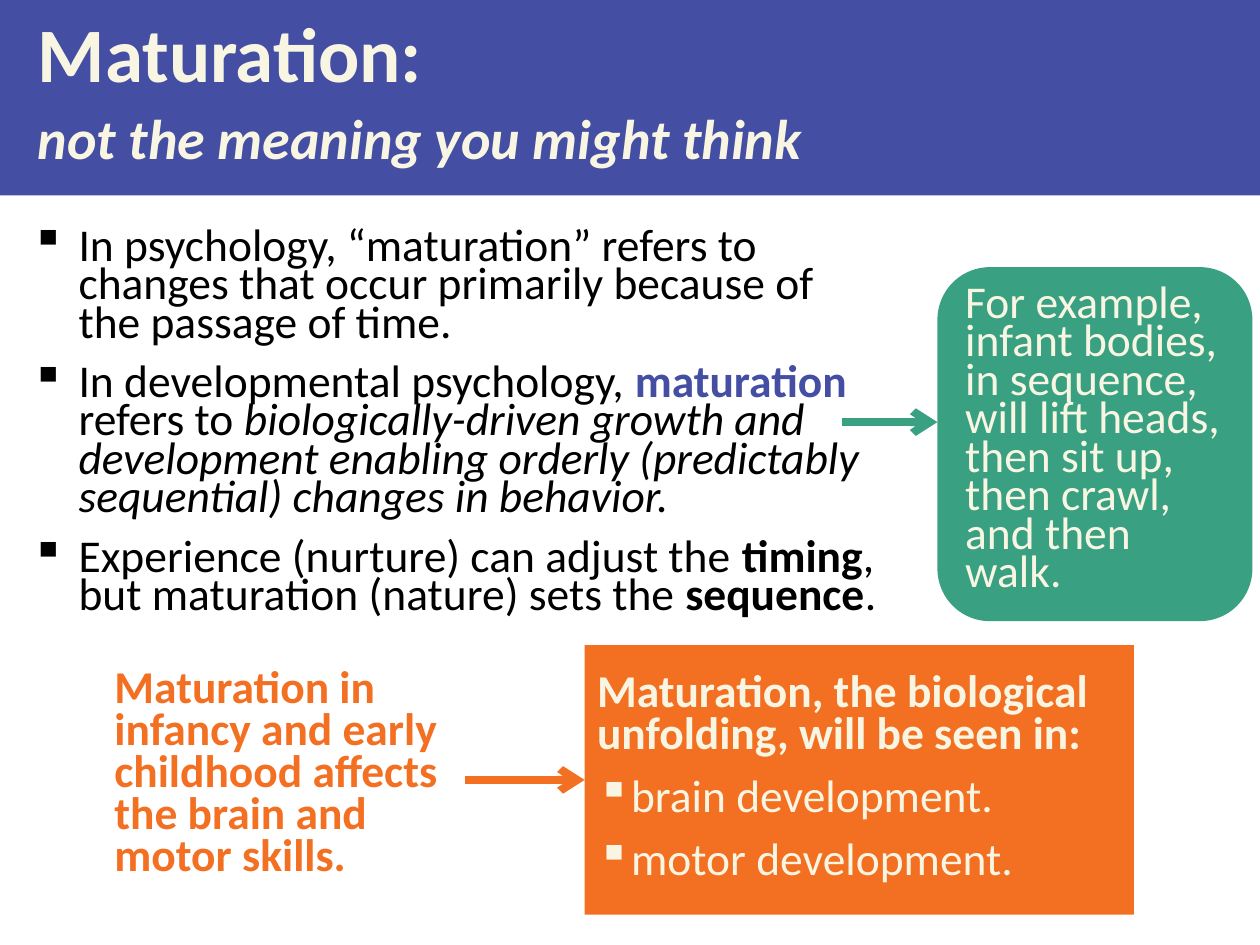
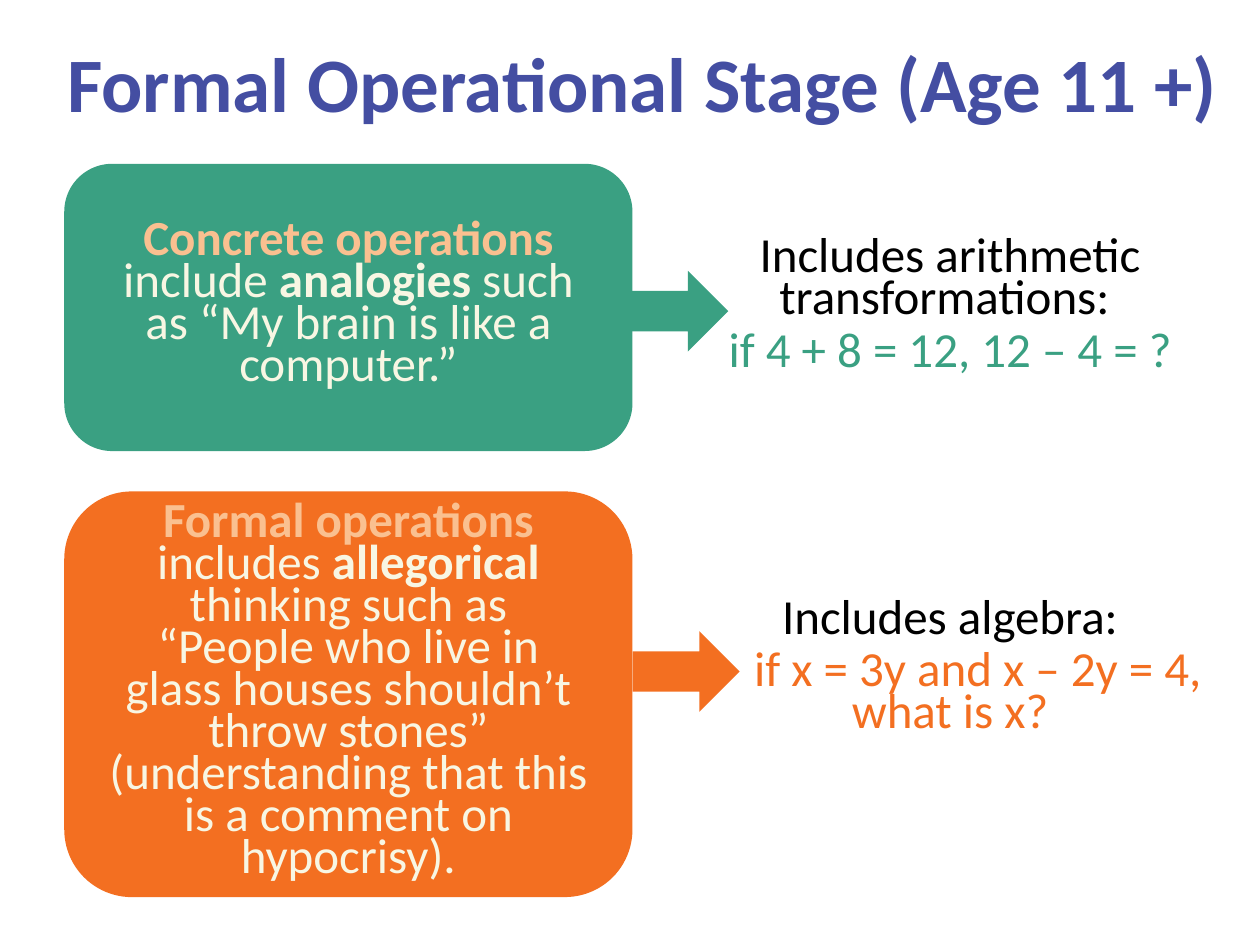
from dataclasses import dataclass
from lxml import etree
from pptx import Presentation
from pptx import util as u
from pptx.dml.color import RGBColor
from pptx.enum import shapes, text
from pptx.oxml import ns


@dataclass(frozen=True)
class Theme:
    font: str = "Calibri"
    blue: str = "444EA2"
    green: str = "3AA082"
    orange: str = "F36F21"
    cream: str = "F8F6E3"
    peach: str = "FAC090"
    black: str = "000000"
    title: int = 44
    sub: int = 32
    large: int = 28
    body: int = 26
    line: float = 4.5


look = Theme()
deck = Presentation()
deck.slide_width, deck.slide_height = u.Inches(10), u.Inches(7.5)
cell = deck.slide_width // 100
kind = shapes.MSO_SHAPE
mid = text.MSO_ANCHOR.MIDDLE
top = text.MSO_ANCHOR.TOP
left = text.PP_ALIGN.LEFT
mean = text.PP_ALIGN.CENTER


def draw(page, form, grid, fill=None, anchor=top, pad=(1, 0.5, 1, 0.5)):
    area = [round(n * cell) for n in grid]
    if form is None:
        item = page.shapes.add_textbox(*area)
    else:
        item = page.shapes.add_shape(form, *area)
        item.shadow.inherit = False
        item.fill.solid()
        item.fill.fore_color.rgb = RGBColor.from_string(fill)
        item.line.fill.background()
    frame = item.text_frame
    frame.word_wrap = True
    frame.vertical_anchor = anchor
    (frame.margin_left, frame.margin_top,
     frame.margin_right, frame.margin_bottom) = [round(n * cell) for n in pad]
    return item


def write(item, runs, size, lead, before=0, after=0, align=left, hang=0, first=0):
    frame = item.text_frame
    para = frame.paragraphs[0]
    if para.runs:
        para = frame.add_paragraph()
    para.alignment = align
    para.line_spacing = u.Pt(lead)
    para.space_before, para.space_after = u.Pt(before), u.Pt(after)
    prop = para._p.get_or_add_pPr()
    prop.set("marL", str(round(hang * cell)))
    prop.set("indent", str(round((first - hang) * cell)))
    if hang:
        etree.SubElement(prop, ns.qn("a:buChar")).set("char", "▪")
    for words, tint, style in runs:
        run = para.add_run()
        run.text = words
        font = run.font
        font.name, font.size = look.font, u.Pt(size)
        font.bold, font.italic = "b" in style, "i" in style
        font.color.rgb = RGBColor.from_string(tint)


blank = deck.slide_layouts[6]
page = deck.slides.add_slide(blank)

points = draw(page, None, (1.5, 15, 69.1, 37.6), anchor=mid)
for runs in (
    [("In psychology, “maturation” refers to changes that occur primarily "
      "because of the passage of time.", look.black, "")],
    [("In developmental psychology, ", look.black, ""),
     ("maturation", look.blue, "b"),
     (" refers to ", look.black, ""),
     ("biologically-driven growth and development enabling orderly "
      "(predictably sequential) changes in behavior.", look.black, "i")],
    [("Experience (nurture) can adjust the ", look.black, ""),
     ("timing", look.black, "b"),
     (", but maturation (nature) sets the ", look.black, ""),
     ("sequence", look.black, "b"),
     (".", look.black, "")],
):
    write(points, runs, look.body, 22, after=12, hang=3.75)

band = draw(page, kind.RECTANGLE, (0, 0, 100, 15.5), look.blue, mid, (3, 0.5, 1, 0.5))
write(band, [("Maturation:", look.cream, "b")], look.title, 42)
write(band, [("not the meaning you might think", look.cream, "bi")], look.sub, 42)

case = draw(page, kind.ROUNDED_RECTANGLE, (74.4, 21.2, 25, 28.1), look.green)
write(case, [("For example, infant bodies, in sequence, will lift heads, then sit up, "
              "then crawl, and then walk.", look.cream, "")], look.body, 22, after=12)

claim = draw(page, None, (8.1, 52.7, 29.9, 18))
write(claim, [("Maturation in infancy and early childhood affects the brain and "
               "motor skills.", look.orange, "b")], look.body, 24, 6, 6)

signs = draw(page, kind.RECTANGLE, (46.4, 51.2, 43.6, 21.4), look.orange, mid)
for words, style, hang in (
    ("Maturation, the biological unfolding, will be seen in:", "b", 0),
    ("brain development.", "", 2.4),
    ("motor development.", "", 2.4),
):
    write(signs, [(words, look.cream, style)], look.body, 24, 6, 6, hang=hang)

for start, end, row, tint, goal in (
    (66.8, 74.4, 33.5, look.green, None),
    (36.9, 46.4, 61.9, look.orange, signs),
):
    ends = [round(n * cell) for n in (start, row, end, row)]
    link = page.shapes.add_connector(shapes.MSO_CONNECTOR.STRAIGHT, *ends)
    if goal:
        link.end_connect(goal, 1)
    link.line.width = u.Pt(look.line)
    link.line.color.rgb = RGBColor.from_string(tint)
    stroke = link.line._get_or_add_ln()
    etree.SubElement(stroke, ns.qn("a:tailEnd")).set("type", "arrow")
    etree.SubElement(link._element.spPr, ns.qn("a:effectLst"))

page = deck.slides.add_slide(blank)
head = draw(page, None, (0, 1.9, 100, 11.2), anchor=mid, pad=(3, 0.5, 1, 0.5))
write(head, [("Formal Operational Stage (Age 11 +)", look.blue, "b")],
      look.title, 38, align=mean)

stages = (
    (look.green, 13, 22.8, 18.6, 49.3, 21.5,
     [("Concrete operations", look.peach, "b"),
      (" include ", look.cream, ""),
      ("analogies ", look.cream, "b"),
      ("such as “My brain is like a computer.”", look.cream, "")],
     "Includes arithmetic transformations: ", "if 4 + 8 = 12, 12 – 4 = ?", 0),
    (look.orange, 39, 32.2, 47.3, 50.2, 50.1,
     [("Formal operations ", look.peach, "b"),
      ("includes ", look.cream, ""),
      ("allegorical", look.cream, "b"),
      (" thinking such as “People who live in glass houses shouldn’t throw stones” "
       "(understanding that this is a comment on hypocrisy).", look.cream, "")],
     "Includes algebra:", "if x = 3y and x – 2y = 4, what is x?", 4.4),
)
for tint, row, high, note, col, tip, runs, topic, sum_, first in stages:
    card = draw(page, kind.ROUNDED_RECTANGLE, (5.1, row, 45.1, high), tint, mid, (2,) * 4)
    write(card, runs, look.large, 24, after=6, align=mean)
    side = draw(page, None, (54.1, note, 42.6, 12.2))
    write(side, [(topic, look.black, "")], look.large, 24, after=6, align=mean)
    write(side, [(sum_, tint, "")], look.large, 24, after=6, align=mean, first=first)
    draw(page, kind.RIGHT_ARROW, (col, tip, 8.5, 6.4), tint)

deck.save("out.pptx")
